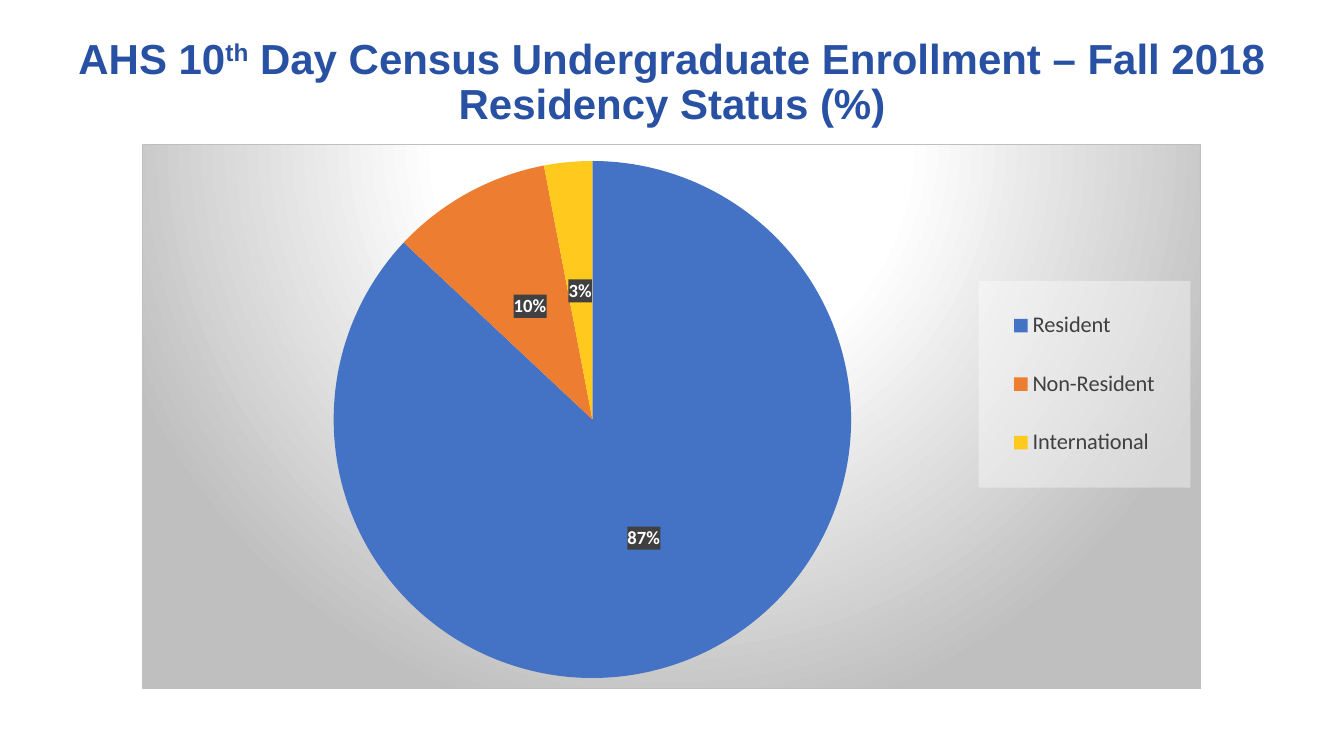
from lxml import etree
from pptx import Presentation
from pptx.chart.data import CategoryChartData
from pptx.dml.color import RGBColor
from pptx.enum.chart import XL_CHART_TYPE as ChartType, XL_LABEL_POSITION as LabelPos
from pptx.enum.chart import XL_LEGEND_POSITION as LegendPos
from pptx.enum.text import MSO_ANCHOR, PP_ALIGN
from pptx.oxml.ns import qn
from pptx.util import Pt

TITLE = [
    ("AHS 10", False),
    ("th", True),
    (" Day Census Undergraduate Enrollment – Fall 2018 Residency Status (%)", False),
]
RESIDENCY = [("Resident", 87, "blue"), ("Non-Resident", 10, "orange"), ("International", 3, "yellow")]
COLORS = {
    "title": "2850A3", "blue": "4472C4", "orange": "ED7D31", "yellow": "FFC91D",
    "white": "FFFFFF", "gray": "BFBFBF", "dark": "404040", "black": "000000",
}
BACKDROP = [(0, "white"), (39, "white"), (100, "gray")]
TITLE_BOX = (46, 28.8, 868.3, 61.2)
CHART_BOX = (101.5, 103, 756.7, 389.5)
PIE_AREA = (0.18, 0.03, 0.49, 0.95)
LEGEND_AREA = (0.79, 0.25, 0.2, 0.38)
NS = ('xmlns:c="http://schemas.openxmlformats.org/drawingml/2006/chart" '
      'xmlns:a="http://schemas.openxmlformats.org/drawingml/2006/main"')


def rgb(name):
    return RGBColor.from_string(COLORS[name])


def set_font(font, size, color, name="Calibri", bold=False):
    font.size, font.name, font.bold = Pt(size), name, bold
    font.color.rgb = rgb(color)


def solid(name, alpha=100):
    return (f'<a:solidFill><a:srgbClr val="{COLORS[name]}">'
            f'<a:alpha val="{alpha * 1000}"/></a:srgbClr></a:solidFill>')


def sp_pr(content):
    return etree.fromstring(f"<c:spPr {NS}>{content}</c:spPr>")


def layout(area, target=""):
    modes = '<c:xMode val="edge"/><c:yMode val="edge"/>'
    sizes = "".join(f'<c:{key} val="{value}"/>' for key, value in zip("xywh", area))
    return etree.fromstring(
        f"<c:layout {NS}><c:manualLayout>{target}{modes}{sizes}</c:manualLayout></c:layout>")


prs = Presentation()
prs.slide_width, prs.slide_height = Pt(960), Pt(540)
slide = prs.slides.add_slide(prs.slide_layouts[5])

title = slide.shapes.title
title.left, title.top, title.width, title.height = map(Pt, TITLE_BOX)
tf = title.text_frame
tf.word_wrap = True
tf.vertical_anchor = MSO_ANCHOR.MIDDLE
p = tf.paragraphs[0]
p.alignment = PP_ALIGN.CENTER
p.line_spacing = 0.9
for text, raised in TITLE:
    r = p.add_run()
    r.text = text
    set_font(r.font, 30, "title", "Arial", True)
    if raised:
        r.font._element.set("baseline", "30000")

data = CategoryChartData()
data.categories = [name for name, _, _ in RESIDENCY]
data.add_series("Series 1", [value for _, value, _ in RESIDENCY])
chart = slide.shapes.add_chart(ChartType.PIE, *map(Pt, CHART_BOX), data).chart
chart.has_title = False
set_font(chart.font, 10, "black")

plot = chart.plots[0]
plot.vary_by_categories = True
for i, (_, _, color) in enumerate(RESIDENCY):
    fill = plot.series[0].points[i].format.fill
    fill.solid()
    fill.fore_color.rgb = rgb(color)

plot.has_data_labels = True
labels = plot.data_labels
labels.show_percentage, labels.show_value = True, False
labels.number_format, labels.number_format_is_linked = "0%", False
labels.position = LabelPos.CENTER
set_font(labels.font, 13.3, "white", bold=True)
labels._element.find(qn("c:txPr")).addprevious(sp_pr(solid("dark", 90)))

chart.has_legend = True
legend = chart.legend
legend.position = LegendPos.RIGHT
legend.include_in_layout = False
set_font(legend.font, 16, "dark")
legend._element.find(qn("c:legendPos")).addnext(layout(LEGEND_AREA))
legend._element.find(qn("c:txPr")).addprevious(sp_pr(solid("white", 39)))

space = chart._chartSpace
plot_area = space.find(".//" + qn("c:plotArea"))
for old in plot_area.findall(qn("c:layout")):
    plot_area.remove(old)
plot_area.insert(0, layout(PIE_AREA, '<c:layoutTarget val="inner"/>'))

stops = "".join(f'<a:gs pos="{pos * 1000}"><a:srgbClr val="{COLORS[name]}"/></a:gs>'
                for pos, name in BACKDROP)
gradient = (f'<a:gradFill><a:gsLst>{stops}</a:gsLst><a:path path="circle">'
            '<a:fillToRect l="50000" t="-80000" r="50000" b="180000"/></a:path></a:gradFill>')
border = f'<a:ln w="{Pt(0.75)}">{solid("gray")}</a:ln>'
space.find(qn("c:chart")).addnext(sp_pr(gradient + border))

prs.save("out.pptx")
